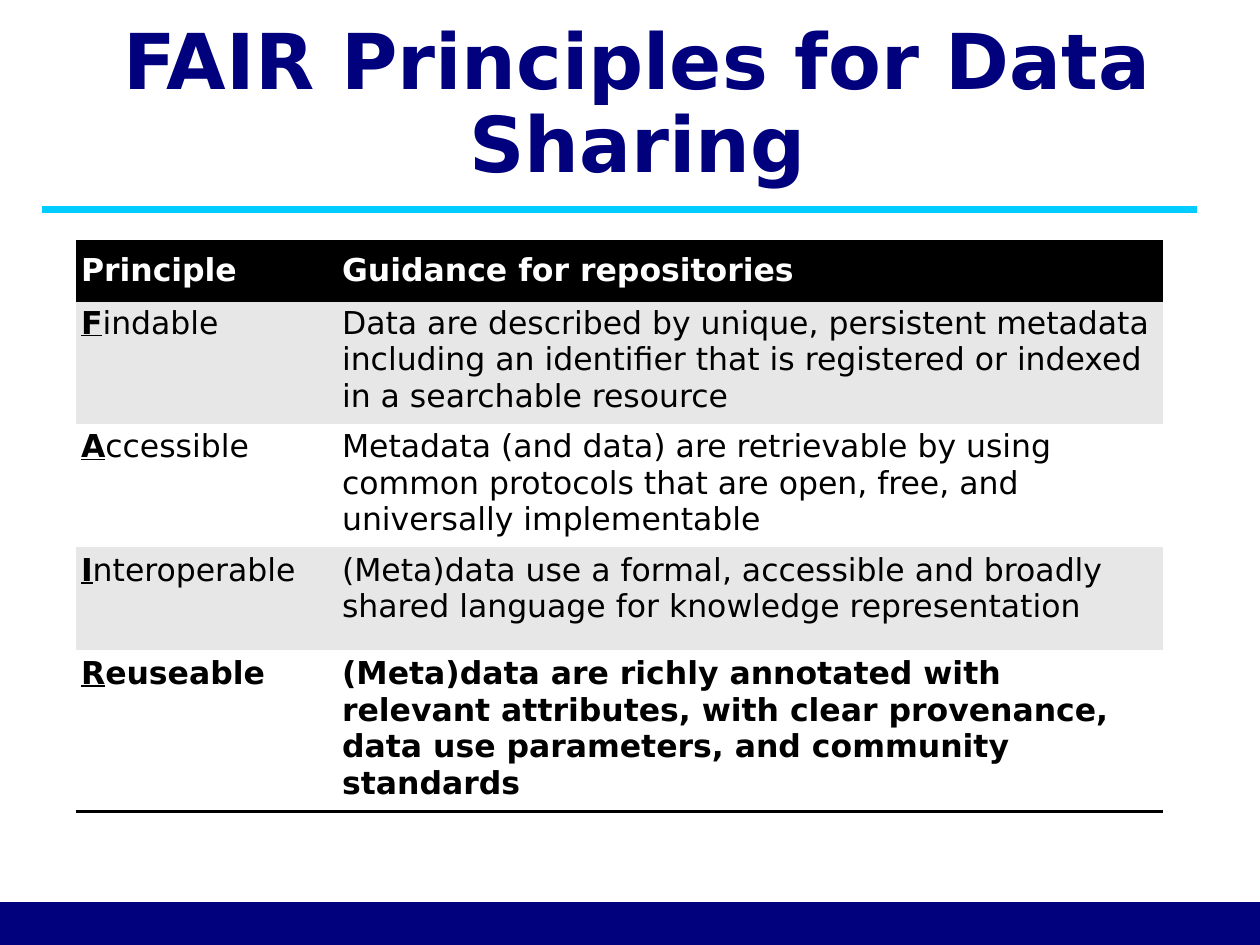
from lxml.etree import SubElement
from pptx import Presentation
from pptx.dml.color import RGBColor
from pptx.enum.shapes import MSO_CONNECTOR, MSO_SHAPE
from pptx.enum.text import MSO_ANCHOR, PP_ALIGN
from pptx.oxml import parse_xml
from pptx.oxml.ns import nsdecls, qn
from pptx.util import Pt

FONT = "DejaVu Sans"
NAVY, CYAN, BLACK, WHITE, GREY = "01017D", "00CCFF", "000000", "FFFFFF", "E7E7E7"
NO_STYLE_NO_GRID = "{2D5ABB26-0587-4C30-8999-92F81FD0307C}"


def color(hex_string):
    return RGBColor.from_string(hex_string)


def style(span, size, hex_string, bold):
    span.font.name = FONT
    span.font.size = Pt(size)
    span.font.bold = bold
    span.font.color.rgb = color(hex_string)


deck = Presentation()
deck.slide_width, deck.slide_height = Pt(720), Pt(540)
page = deck.slides.add_slide(deck.slide_layouts[6])

# Title
title = page.shapes.add_textbox(Pt(54), Pt(9.4), Pt(620.6), Pt(102.2))
frame = title.text_frame
frame.word_wrap = True
frame.vertical_anchor = MSO_ANCHOR.MIDDLE
frame.text = "FAIR Principles for Data Sharing"
para = frame.paragraphs[0]
para.alignment = PP_ALIGN.CENTER
para.line_spacing = 0.9
style(para.runs[0], 44, NAVY, True)

# Table of principles
rows = [
    ("Principle", "Guidance for repositories"),
    ("Findable", "Data are described by unique, persistent metadata including an "
     "identifier that is registered or indexed in a searchable resource"),
    ("Accessible", "Metadata (and data) are retrievable by using common protocols "
     "that are open, free, and universally implementable"),
    ("Interoperable", "(Meta)data use a formal, accessible and broadly shared "
     "language for knowledge representation"),
    ("Reuseable", "(Meta)data are richly annotated with relevant attributes, with "
     "clear provenance, data use parameters, and community standards"),
]
last = len(rows) - 1
graphic = page.shapes.add_table(len(rows), 2, Pt(43.4), Pt(138), Pt(621), Pt(303))
table = graphic.table
table._tbl.tblPr.find(qn("a:tableStyleId")).text = NO_STYLE_NO_GRID
for column, width in zip(table.columns, (149.2, 471.8)):
    column.width = Pt(width)
for row, height in zip(table.rows, (33.5, 70, 70, 59, 70)):
    row.height = Pt(height)

for row_index, texts in enumerate(rows):
    header = row_index == 0
    bold = row_index in (0, last)
    for column_index, text in enumerate(texts):
        cell = table.cell(row_index, column_index)
        cell.margin_left = cell.margin_right = Pt(2.9)
        cell.margin_top = cell.margin_bottom = Pt(2.9)
        cell.vertical_anchor = MSO_ANCHOR.MIDDLE if header else MSO_ANCHOR.TOP
        cell.fill.solid()
        cell.fill.fore_color.rgb = color(
            BLACK if header else GREY if row_index % 2 else WHITE)

        para = cell.text_frame.paragraphs[0]
        initial = column_index == 0 and not header
        for part in (text[0], text[1:]) if initial else (text,):
            span = para.add_run()
            span.text = part
            style(span, 18, WHITE if header else BLACK, bold)
        if initial:
            para.runs[0].font.bold = True
            para.runs[0].font.underline = True

        sides = ("lnT", "lnB") if header else ("lnB",) if row_index == last else ()
        for position, side in enumerate(sides):
            border = parse_xml(
                f'<a:{side} {nsdecls("a")} w="{Pt(2)}"><a:solidFill>'
                f'<a:srgbClr val="{BLACK}"/></a:solidFill></a:{side}>')
            cell._tc.get_or_add_tcPr().insert(position, border)

# Rule under the title
rule = page.shapes.add_connector(
    MSO_CONNECTOR.STRAIGHT, Pt(684), Pt(120), Pt(24), Pt(120))
rule.line.color.rgb = color(CYAN)
rule.line.width = Pt(4)
SubElement(rule._element.spPr, qn("a:effectLst"))

# Footer band
footer = page.shapes.add_shape(MSO_SHAPE.RECTANGLE, 0, Pt(516), Pt(720), Pt(24))
footer.shadow.inherit = False
footer.fill.solid()
footer.fill.fore_color.rgb = color(NAVY)
footer.line.color.rgb = color(NAVY)
footer.line.width = Pt(1)

deck.save("out.pptx")
